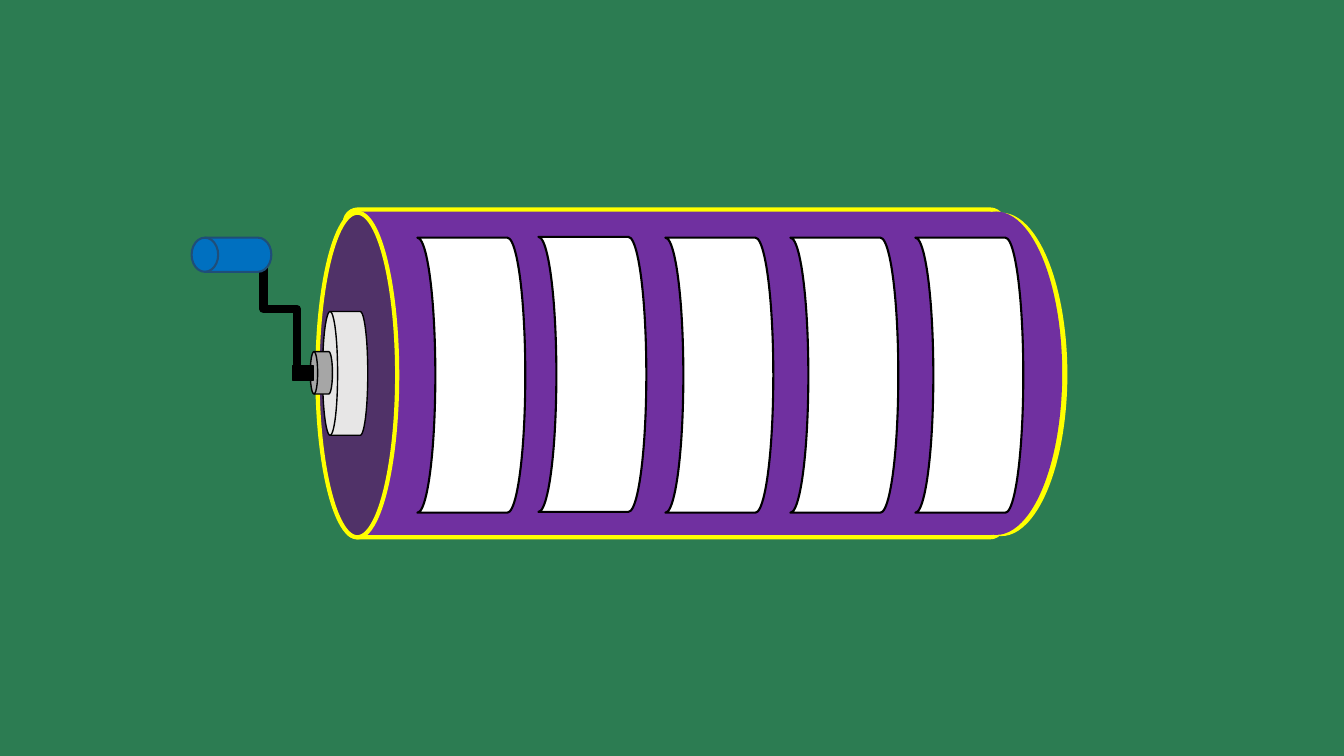
import dataclasses

import pptx
import pptx.dml.color
import pptx.enum.shapes
import pptx.oxml
import pptx.oxml.ns
import pptx.util

Cm = pptx.util.Cm
Preset = pptx.enum.shapes.MSO_SHAPE


@dataclasses.dataclass(frozen=True)
class Theme:
    """Colours and line widths of the slide."""
    backdrop: str = "2C7C52"
    trim: str = "FFFF00"
    barrel: str = "7030A0"
    face: str = "503268"
    hub: str = "E7E6E6"
    axle: str = "A6A6A6"
    grip: str = "0070C0"
    grip_edge: str = "1F4E79"
    window: str = "FFFFFF"
    ink: str = "000000"
    trim_width: float = 3
    fine_width: float = 1
    edge_width: float = 1.5
    rod_width: float = 6


@dataclasses.dataclass(frozen=True)
class Box:
    """A region in centimetres."""
    left: float
    top: float
    width: float
    height: float

    def inner(self, left, top, width, height):
        """Return a box placed relative to this one."""
        return Box(self.left + left, self.top + top, width, height)


THEME = Theme()


def rgb(code):
    """Turn a hex code into a colour."""
    return pptx.dml.color.RGBColor.from_string(code)


def add_piece(slide, preset, box, fill, edge=None, width=THEME.fine_width, mirrored=False):
    """Add one filled preset shape, optionally outlined and mirrored."""
    piece = slide.shapes.add_shape(
        preset, Cm(box.left), Cm(box.top), Cm(box.width), Cm(box.height))
    piece.shadow.inherit = False
    piece.fill.solid()
    piece.fill.fore_color.rgb = rgb(fill)
    if edge:
        piece.line.color.rgb = rgb(edge)
        piece.line.width = pptx.util.Pt(width)
    else:
        piece.line.fill.background()
    if mirrored:
        piece.element.spPr.find(pptx.oxml.ns.qn("a:xfrm")).set("flipH", "1")
    return piece


def add_rod(slide, box):
    """Add an elbow rod whose box is turned a quarter to the left."""
    rod = slide.shapes.add_connector(
        pptx.enum.shapes.MSO_CONNECTOR.ELBOW,
        Cm(box.left), Cm(box.top + box.height), Cm(box.left + box.width), Cm(box.top))
    rod.line.color.rgb = rgb(THEME.ink)
    rod.line.width = pptx.util.Pt(THEME.rod_width)
    properties = rod.element.spPr
    properties.find(pptx.oxml.ns.qn("a:xfrm")).set("rot", str(270 * 60000))
    properties.append(pptx.oxml.parse_xml(
        f'<a:effectLst {pptx.oxml.ns.nsdecls("a")}/>'))


def draw_drum(slide, box):
    """Draw the barrel with its rounded end and its front face."""
    end_width, end_height = 3.33, 8.15
    add_piece(slide, Preset.OVAL, box.inner(15.57, 0.08, end_width, end_height), THEME.trim)
    barrel = add_piece(slide, Preset.ROUNDED_RECTANGLE, box.inner(0.69, 0, 16.59, box.height),
                       THEME.barrel, THEME.trim, THEME.trim_width)
    barrel.adjustments[0] = 0.04
    add_piece(slide, Preset.OVAL, box.inner(0, 0.08, 2.01, 8.18),
              THEME.face, THEME.trim, THEME.trim_width)
    add_piece(slide, Preset.OVAL, box.inner(15.44, 0.05, end_width, end_height), THEME.barrel)


def draw_crank(slide, box):
    """Draw the hub, axle, rod and grip of the crank."""
    cylinder = Preset.FLOWCHART_DIRECT_ACCESS_STORAGE
    add_piece(slide, cylinder, box.inner(3.3, 1.86, 1.14, 3.12),
              THEME.hub, THEME.ink, mirrored=True)
    add_piece(slide, cylinder, box.inner(2.99, 2.87, 0.56, 1.07),
              THEME.axle, THEME.ink, mirrored=True)
    add_piece(slide, Preset.RECTANGLE, box.inner(2.54, 3.23, 0.53, 0.36), THEME.ink, THEME.ink)
    add_rod(slide, box.inner(0.58, 1.38, 3.3, 0.84))
    add_piece(slide, cylinder, box.inner(0, 0, 2.01, 0.86),
              THEME.grip, THEME.grip_edge, THEME.edge_width, mirrored=True)


def draw_windows(slide, box):
    """Draw the row of curved blank windows."""
    offsets = [(0, 0.02), (3.05, 0), (6.25, 0.02), (9.4, 0.02), (12.55, 0.02)]
    for across, down in offsets:
        add_piece(slide, Preset.FLOWCHART_STORED_DATA, box.inner(across, down, 2.72, 6.93),
                  THEME.window, THEME.ink, THEME.edge_width, mirrored=True)


def main():
    """Build and save the slide."""
    deck = pptx.Presentation()
    deck.slide_width, deck.slide_height = Cm(33.87), Cm(19.05)
    slide = deck.slides.add_slide(deck.slide_layouts[6])
    slide.background.fill.solid()
    slide.background.fill.fore_color.rgb = rgb(THEME.backdrop)
    draw_drum(slide, Box(8, 5.28, 18.9, 8.26))
    draw_crank(slide, Box(4.83, 5.99, 4.44, 4.98))
    draw_windows(slide, Box(10.52, 5.97, 15.27, 6.95))
    deck.save("out.pptx")


if __name__ == "__main__":
    main()
